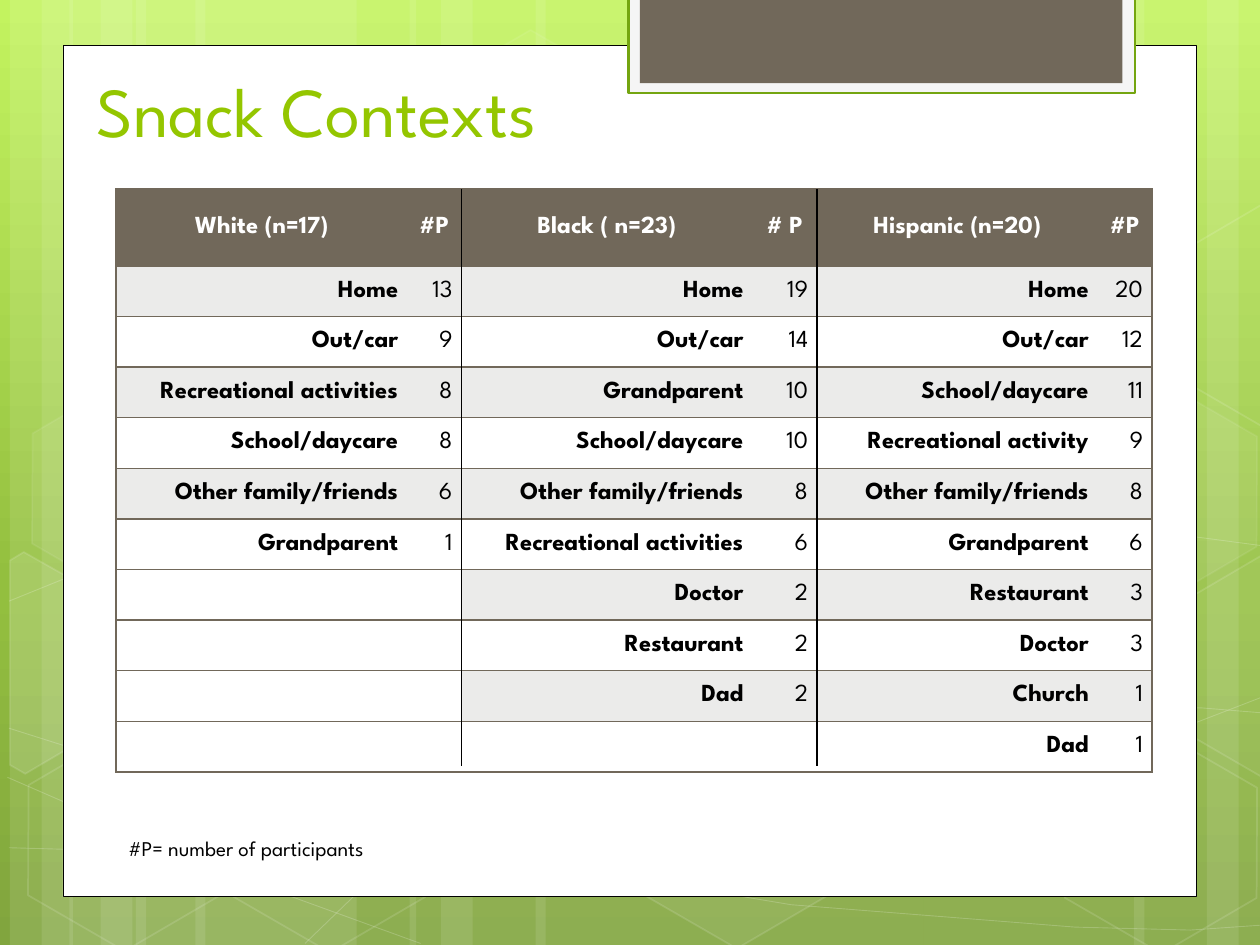
from copy import deepcopy

from lxml import etree
from pptx import Presentation
from pptx.dml.color import RGBColor
from pptx.enum.shapes import MSO_CONNECTOR, MSO_SHAPE
from pptx.enum.text import MSO_ANCHOR, PP_ALIGN
from pptx.oxml.ns import qn
from pptx.util import Cm, Pt

RECTANGLE, HEXAGON, STRAIGHT = MSO_SHAPE.RECTANGLE, MSO_SHAPE.HEXAGON, MSO_CONNECTOR.STRAIGHT
MIDDLE, BOTTOM = MSO_ANCHOR.MIDDLE, MSO_ANCHOR.BOTTOM
CENTER, RIGHT = PP_ALIGN.CENTER, PP_ALIGN.RIGHT

FONT = "League Spartan"
WHITE, BLACK, TAUPE, BAND, LIME = "FFFFFF", "000000", "71685A", "EBEBEA", "94C600"
SLIDE_W, SLIDE_H = 25.4, 19.05

SKY = [(0, "C3F35F"), (0.62, "93BF3F"), (1, "81A53E")]
# Left edge and width of each translucent stripe
STRIPES = [(2.74, 4.45), (0.2, 1.27), (0.84, 2.11), (3.94, 4.45), (1.4, 1.27), (2.03, 2.11),
           (18.62, 4.45), (24.33, 1.27), (22.86, 2.11), (10.8, 7.82), (8.26, 1.27), (8.89, 2.11)]
WAVES = [
    [(0.18, 17.09), (4.83, 17.22), (11.63, 16.89), (20.12, 15.67), (23.3, 14.88), (25.58, 14)],
    [(0.18, 12.12), (3.07, 10.95), (8.81, 9.83), (16.61, 9.83), (25.58, 11.02)],
    [(0.15, 15.67), (4.7, 17.65), (8.48, 19.02)],
    [(0.18, 14.68), (3.25, 15.65), (9.07, 17.09), (15.95, 18.24), (21.67, 18.69), (24, 18.75),
     (25.58, 18.64)],
    [(6.15, 19.02), (7.67, 17.55), (9.86, 16.23), (11.94, 15.47), (15.44, 14.68), (17.27, 14.45),
     (20.17, 14.27), (24.21, 14.27), (25.55, 14.38)],
]
# Left, top, fill opacity and line opacity in percent
HEXAGONS = [(8.48, 0.91, 4, 8), (12.62, 14.96, 6, 12), (0.28, 15.01, 0, 12), (0.36, 7.92, 7, 8),
            (4.42, 15.04, 0, 12), (19.13, 11.51, 10, 12), (21.18, 15.06, 0, 12),
            (21.18, 7.98, 7, 8)]
LEFT_CUT = [(0.2, 11.3), (0.48, 11.13), (2.44, 12.24), (2.41, 14.48), (0.51, 15.6), (0.2, 15.42)]
RIGHT_CUT = [(23.52, 12.32), (25.43, 11.2), (25.63, 11.33), (25.63, 15.57), (25.45, 15.67),
             (23.52, 14.55)]
HEXAGON_STEP = 7.07

GROUPS = [
    ("White (n=17)", "#P", [
        ("Home", 13), ("Out/car", 9), ("Recreational activities", 8), ("School/daycare", 8),
        ("Other family/friends", 6), ("Grandparent", 1)]),
    ("Black ( n=23)", "# P", [
        ("Home", 19), ("Out/car", 14), ("Grandparent", 10), ("School/daycare", 10),
        ("Other family/friends", 8), ("Recreational activities", 6), ("Doctor", 2),
        ("Restaurant", 2), ("Dad", 2)]),
    ("Hispanic (n=20)", "#P", [
        ("Home", 20), ("Out/car", 12), ("School/daycare", 11), ("Recreational activity", 9),
        ("Other family/friends", 8), ("Grandparent", 6), ("Restaurant", 3), ("Doctor", 3),
        ("Church", 1), ("Dad", 1)]),
]
COLUMN_WIDTHS = [5.87, 1.09, 5.87, 1.3, 5.66, 1.09]
HEADER_H, ROW_H = 1.55, 1.02
TABLE_LEFT, TABLE_TOP = 2.34, 3.81


def rgb(color):
    return RGBColor.from_string(color)


def apply(target, values):
    for name, value in values.items():
        setattr(target, name, value)


def style(shape, fill=None, line=None, weight=1, fill_alpha=100, line_alpha=100):
    """Set fill and line; opacity is in percent."""
    shape.shadow.inherit = False
    for part, color, alpha, parents in (
            (shape.fill, fill, fill_alpha, ["a:solidFill"]),
            (shape.line.fill, line, line_alpha, ["a:ln", "a:solidFill"])):
        if not color or not alpha:
            part.background()
            continue
        part.solid()
        part.fore_color.rgb = rgb(color)
        if alpha < 100:
            tint = shape.element.spPr.find("/".join(map(qn, parents + ["a:srgbClr"])))
            etree.SubElement(tint, qn("a:alpha"), val=str(alpha * 1000))
    if line:
        shape.line.width = Pt(weight)


def add_box(slide, left, top, width, height, kind=RECTANGLE, **look):
    box = slide.shapes.add_shape(kind, Cm(left), Cm(top), Cm(width), Cm(height))
    style(box, **look)
    return box


def add_outline(slide, points, close, **look):
    start, *rest = [(Cm(x), Cm(y)) for x, y in points]
    builder = slide.shapes.build_freeform(*start)
    builder.add_line_segments(rest, close=close)
    style(builder.convert_to_shape(), **look)


def write(paragraph, text, size, color, bold=False):
    run = paragraph.add_run()
    run.text = text
    apply(run.font, {"name": FONT, "size": Pt(size), "bold": bold})
    run.font.color.rgb = rgb(color)


def add_text(slide, text, left, top, width, height, size, color, **frame_values):
    frame = slide.shapes.add_textbox(Cm(left), Cm(top), Cm(width), Cm(height)).text_frame
    apply(frame, frame_values)
    write(frame.paragraphs[0], text, size, color)


def fill_cell(cell, text, fill, color, align, bold, sides):
    apply(cell, {"vertical_anchor": MIDDLE, "margin_left": Cm(0.18), "margin_right": Cm(0.18),
                 "margin_top": 0, "margin_bottom": 0})
    cell.fill.solid()
    cell.fill.fore_color.rgb = rgb(fill)
    for index, side in enumerate("LRTB"):
        edge = etree.Element(qn(f"a:ln{side}"), w=str(Pt(1)))
        ink = etree.SubElement(edge, qn("a:solidFill" if side in sides else "a:noFill"))
        if side in sides:
            etree.SubElement(ink, qn("a:srgbClr"), val=TAUPE)
        cell._tc.get_or_add_tcPr().insert(index, edge)
    if text:
        cell.text_frame.paragraphs[0].alignment = align
        write(cell.text_frame.paragraphs[0], text, 14, color, bold)


def add_snack_table(slide):
    row_count = 1 + max(len(entries) for _, _, entries in GROUPS)
    table = slide.shapes.add_table(
        row_count, len(COLUMN_WIDTHS), Cm(TABLE_LEFT), Cm(TABLE_TOP),
        Cm(sum(COLUMN_WIDTHS)), Cm(HEADER_H + ROW_H * (row_count - 1))).table
    for column, width in zip(table.columns, COLUMN_WIDTHS):
        column.width = Cm(width)
    for number, row in enumerate(table.rows):
        row.height = Cm(ROW_H if number else HEADER_H)
    for g, (group, count_label, entries) in enumerate(GROUPS):
        lines = [(group, count_label)] + entries
        lines += [("", "")] * (row_count - len(lines))
        for r, line in enumerate(lines):
            fill = TAUPE if r == 0 else BAND if r % 2 and line[0] else WHITE
            color, align = (BLACK, RIGHT) if r else (WHITE, CENTER)
            for c, value in enumerate(line, start=2 * g):
                sides = "TB" + {0: "L", len(COLUMN_WIDTHS) - 1: "R"}.get(c, "")
                bold = r == 0 or c % 2 == 0
                fill_cell(table.cell(r, c), str(value), fill, color, align, bold, sides)


def add_divider(slide, x):
    divider = slide.shapes.add_connector(STRAIGHT, Cm(x), Cm(TABLE_TOP), Cm(x), Cm(15.44))
    divider.line.color.rgb = rgb(BLACK)
    divider.line.width = Pt(0.75)
    etree.SubElement(divider.element.spPr, qn("a:effectLst"))


def add_backdrop(slide):
    sky = slide.background.fill
    sky.gradient()
    sky.gradient_angle = 270
    stops = slide.element.find(".//" + qn("a:gsLst"))
    stops.append(deepcopy(stops[-1]))
    for stop, (position, color) in zip(sky.gradient_stops, SKY):
        stop.position = position
        stop.color.rgb = rgb(color)
    for left, width in STRIPES:
        add_box(slide, left, 0, width, SLIDE_H, fill=WHITE, fill_alpha=10)
    for wave in WAVES:
        add_outline(slide, wave, False, line=WHITE, weight=0.5, line_alpha=20)
    for left, top, fill_alpha, line_alpha in HEXAGONS:
        hexagon = add_box(slide, left, top, 4.45, 3.86, HEXAGON, fill=WHITE, line=WHITE,
                          fill_alpha=fill_alpha, line_alpha=line_alpha)
        hexagon.adjustments[0] = 0.285
        hexagon.rotation = 30
    upper_cut = [(x, y - HEXAGON_STEP) for x, y in RIGHT_CUT]
    for points, alpha in ((LEFT_CUT, 10), (RIGHT_CUT, 4), (upper_cut, 0)):
        add_outline(slide, points, True, fill=WHITE, line=WHITE, fill_alpha=alpha, line_alpha=12)


def main():
    deck = Presentation()
    apply(deck, {"slide_width": Cm(SLIDE_W), "slide_height": Cm(SLIDE_H)})
    slide = deck.slides.add_slide(deck.slide_layouts[6])

    # Green backdrop, white panel and tab
    add_backdrop(slide)
    add_box(slide, 1.27, 0.91, 22.86, 17.17, fill=WHITE, line=BLACK, weight=0.5)
    add_box(slide, 12.67, -0.05, 10.21, 1.93, fill="F5F5F5", line="74A510", weight=1.25)
    add_box(slide, 12.9, -0.05, 9.73, 1.73, fill=TAUPE)

    # Title, table with group dividers, and footnote
    add_text(slide, "Snack Contexts", 1.7, 1.07, 19.51, 2.11, 40, LIME,
             word_wrap=True, vertical_anchor=BOTTOM)
    add_snack_table(slide)
    for columns in (2, 4):
        add_divider(slide, TABLE_LEFT + sum(COLUMN_WIDTHS[:columns]))
    add_text(slide, "#P= number of participants", 2.34, 16.71, 6.2, 0.76, 12, BLACK,
             word_wrap=False)
    deck.save("out.pptx")


if __name__ == "__main__":
    main()
